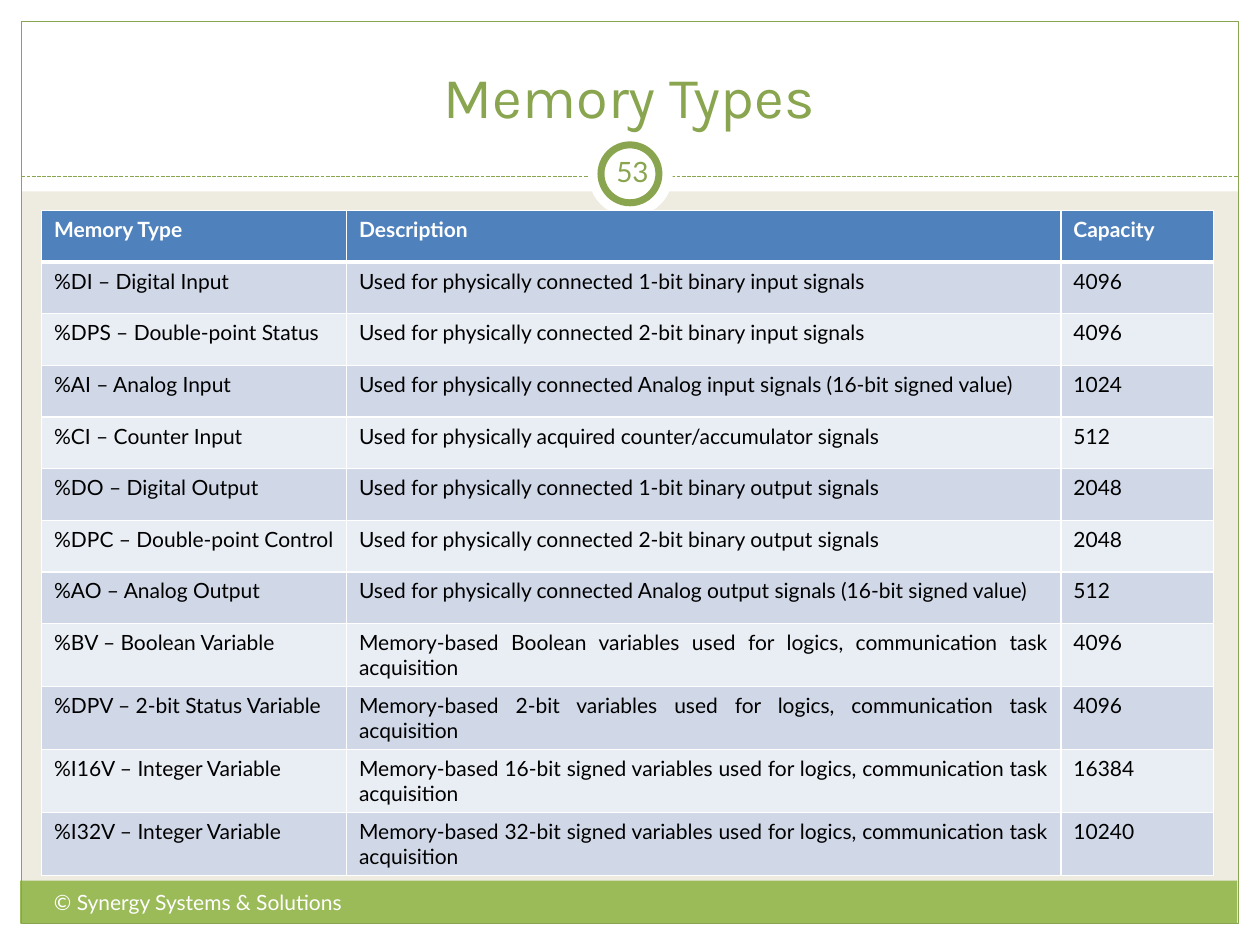
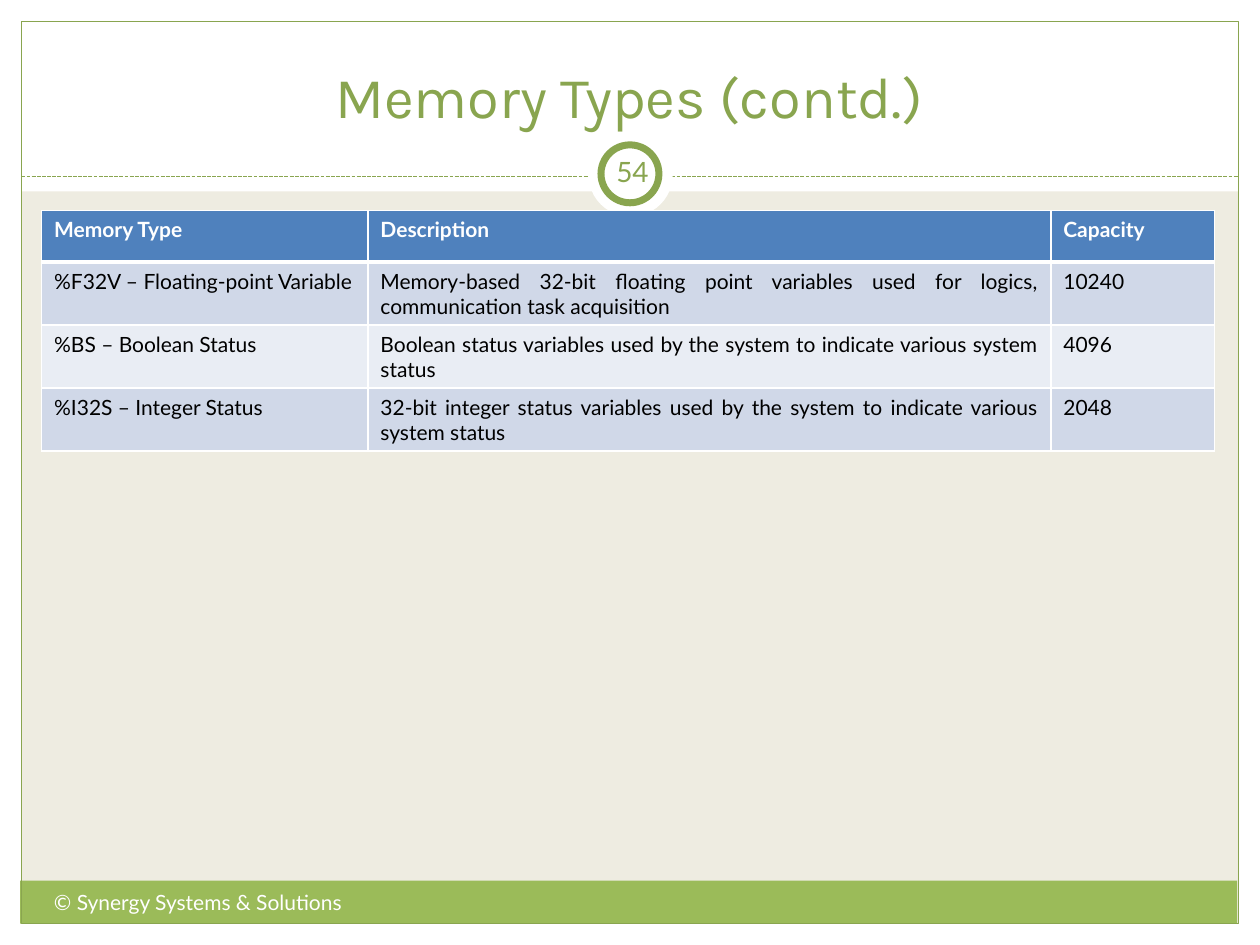
from dataclasses import dataclass

from lxml import etree
from pptx import Presentation
from pptx.dml.color import RGBColor
from pptx.enum.dml import MSO_LINE_DASH_STYLE as Dash
from pptx.enum.shapes import MSO_CONNECTOR as Connector, MSO_SHAPE as Shape
from pptx.enum.text import MSO_ANCHOR as Anchor, PP_ALIGN as Align
from pptx.oxml.ns import qn
from pptx.util import Inches, Pt


@dataclass(frozen=True)
class Theme:
    background: str = "EEECE1"
    white: str = "FFFFFF"
    black: str = "000000"
    green: str = "89A54F"
    footer_green: str = "9BBB59"
    header_blue: str = "4F81BD"
    bands: tuple = ("D0D8E8", "E9EDF4")
    title_font: str = "Karla"
    body_font: str = "Lato"
    title_size: int = 33
    number_size: int = 16
    body_size: int = 12


THEME = Theme()
FOOTER = "© Synergy Systems & Solutions"
HEADINGS = ("Memory Type", "Description", "Capacity")
ROW_HEIGHT = 0.41

MEMORY_TYPES = [
    ("%DI – Digital Input", "Used for physically connected 1-bit binary input signals", "4096"),
    ("%DPS – Double-point Status", "Used for physically connected 2-bit binary input signals", "4096"),
    ("%AI – Analog Input", "Used for physically connected Analog input signals (16-bit signed value)", "1024"),
    ("%CI – Counter Input", "Used for physically acquired counter/accumulator signals", "512"),
    ("%DO – Digital Output", "Used for physically connected 1-bit binary output signals", "2048"),
    ("%DPC – Double-point Control", "Used for physically connected 2-bit binary output signals", "2048"),
    ("%AO – Analog Output", "Used for physically connected Analog output signals (16-bit signed value)", "512"),
    ("%BV – Boolean Variable",
     "Memory-based Boolean variables used for logics, communication task acquisition", "4096"),
    ("%DPV – 2-bit Status Variable",
     "Memory-based 2-bit variables used for logics, communication task acquisition", "4096"),
    ("%I16V – Integer Variable",
     "Memory-based 16-bit signed variables used for logics, communication task acquisition", "16384"),
    ("%I32V – Integer Variable",
     "Memory-based 32-bit signed variables used for logics, communication task acquisition", "10240"),
]
MORE_MEMORY_TYPES = [
    ("%F32V – Floating-point Variable",
     "Memory-based 32-bit floating point variables used for logics, communication task acquisition", "10240"),
    ("%BS – Boolean Status",
     "Boolean status variables used by the system to indicate various system status", "4096"),
    ("%I32S – Integer Status",
     "32-bit integer status variables used by the system to indicate various system status", "2048"),
]


def rgb(color):
    return RGBColor.from_string(color)


def style_paragraph(paragraph, size, color, font=THEME.body_font, align=Align.LEFT, bold=False):
    paragraph.alignment = align
    paragraph.font.name = font
    paragraph.font.size = Pt(size)
    paragraph.font.bold = bold
    paragraph.font.color.rgb = rgb(color)


def add_block(slide, kind, box, fill=None, line=None, line_width=0.75):
    shape = slide.shapes.add_shape(kind, *map(Inches, box))
    shape.shadow.inherit = False
    if fill:
        shape.fill.solid()
        shape.fill.fore_color.rgb = rgb(fill)
    else:
        shape.fill.background()
    if line:
        shape.line.color.rgb = rgb(line)
        shape.line.width = Pt(line_width)
    else:
        shape.line.fill.background()


def add_dashed_rule(slide, left, right, y):
    rule = slide.shapes.add_connector(
        Connector.STRAIGHT, Inches(left), Inches(y), Inches(right), Inches(y))
    rule.line.color.rgb = rgb(THEME.green)
    rule.line.width = Pt(0.75)
    rule.line.dash_style = Dash.SQUARE_DOT
    etree.SubElement(rule._element.spPr, qn("a:effectLst"))


def add_text(slide, box, text, size, color, anchor=Anchor.TOP, inset=None, **style):
    frame = slide.shapes.add_textbox(*map(Inches, box)).text_frame
    frame.word_wrap = True
    frame.vertical_anchor = anchor
    if inset is not None:
        frame.margin_left = frame.margin_right = Inches(inset)
        frame.margin_top = frame.margin_bottom = Inches(inset)
    frame.text = text
    style_paragraph(frame.paragraphs[0], size, color, **style)


def set_borders(cell, top=1, bottom=1):
    properties = cell._tc.get_or_add_tcPr()
    for side, width in (("L", 1), ("R", 1), ("T", top), ("B", bottom)):
        border = etree.SubElement(properties, qn(f"a:ln{side}"), w=str(Pt(width)))
        fill = etree.SubElement(border, qn("a:solidFill"))
        etree.SubElement(fill, qn("a:srgbClr"), val=THEME.white)


def add_memory_table(slide, column_widths, memory_types):
    rows = [HEADINGS, *memory_types]
    table = slide.shapes.add_table(
        len(rows), len(HEADINGS), Inches(0.33), Inches(1.67),
        Inches(sum(column_widths)), Inches(ROW_HEIGHT * len(rows))).table
    for column, width in zip(table.columns, column_widths):
        column.width = Inches(width)
    for row_index, values in enumerate(rows):
        table.rows[row_index].height = Inches(ROW_HEIGHT)
        is_header = row_index == 0
        fill = THEME.header_blue if is_header else THEME.bands[(row_index - 1) % 2]
        for column_index, value in enumerate(values):
            cell = table.cell(row_index, column_index)
            # The heavy rule below the header belongs to both adjoining rows
            set_borders(cell, top=3 if row_index == 1 else 1, bottom=3 if is_header else 1)
            cell.fill.solid()
            cell.fill.fore_color.rgb = rgb(fill)
            cell.text = value
            style_paragraph(cell.text_frame.paragraphs[0], THEME.body_size,
                            THEME.white if is_header else THEME.black,
                            align=Align.JUSTIFY, bold=is_header)


def add_frame(slide):
    slide.background.fill.solid()
    slide.background.fill.fore_color.rgb = rgb(THEME.background)
    # White margins and title area
    for box in ((0, 7.33, 10, 0.17), (0, 0, 10, 1.52), (0, 0, 0.17, 7.5), (9.83, 0, 0.17, 7.5)):
        add_block(slide, Shape.RECTANGLE, box, THEME.white)
    # Footer band, outline and title rule
    add_block(slide, Shape.RECTANGLE, (0.16, 6.99, 9.66, 0.34), THEME.footer_green)
    add_block(slide, Shape.RECTANGLE, (0.17, 0.17, 9.66, 7.16), line=THEME.green)
    add_dashed_rule(slide, 0.17, 9.83, 1.4)
    # Page number ring
    add_block(slide, Shape.OVAL, (4.67, 1.05, 0.67, 0.67), THEME.white)
    add_block(slide, Shape.OVAL, (4.77, 1.15, 0.46, 0.46), THEME.white, THEME.green, 4)


def add_memory_slide(presentation, title, number, column_widths, memory_types):
    slide = presentation.slides.add_slide(presentation.slide_layouts[6])
    add_frame(slide)
    add_text(slide, (0.33, 0.25, 9.33, 0.83), title, THEME.title_size, THEME.green,
             anchor=Anchor.BOTTOM, font=THEME.title_font, align=Align.CENTER)
    add_text(slide, (0.33, 7.01, 3.92, 0.4), FOOTER, THEME.body_size, THEME.white)
    add_text(slide, (4.77, 1.12, 0.5, 0.48), str(number), THEME.number_size, THEME.green,
             anchor=Anchor.MIDDLE, inset=0.05, align=Align.CENTER)
    add_memory_table(slide, column_widths, memory_types)


def main():
    presentation = Presentation()
    presentation.slide_width = Inches(10)
    presentation.slide_height = Inches(7.5)
    add_memory_slide(presentation, "Memory Types", 53, (2.42, 5.67, 1.21), MEMORY_TYPES)
    add_memory_slide(presentation, "Memory Types (contd.)", 54, (2.59, 5.42, 1.3), MORE_MEMORY_TYPES)
    presentation.save("out.pptx")


if __name__ == "__main__":
    main()
